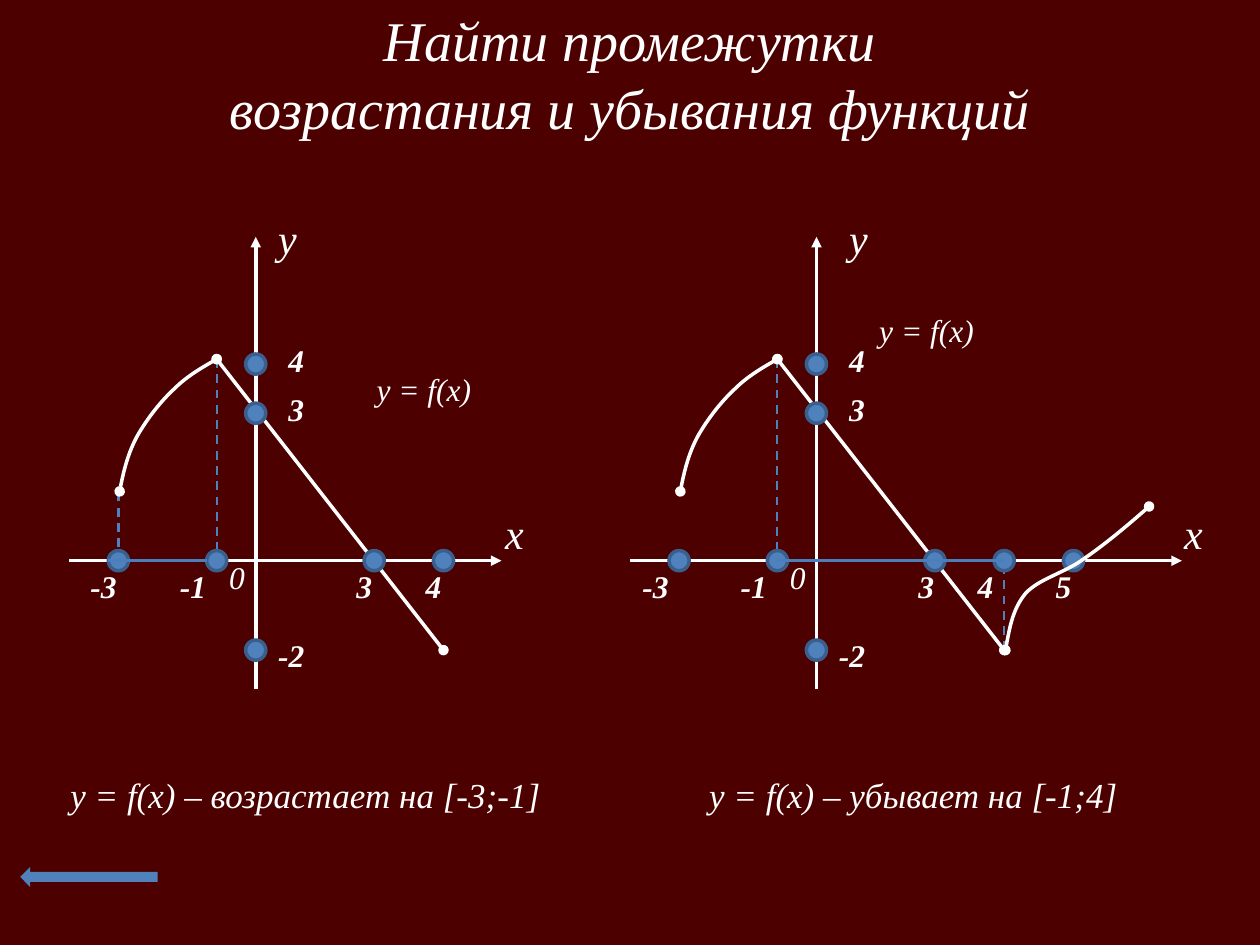
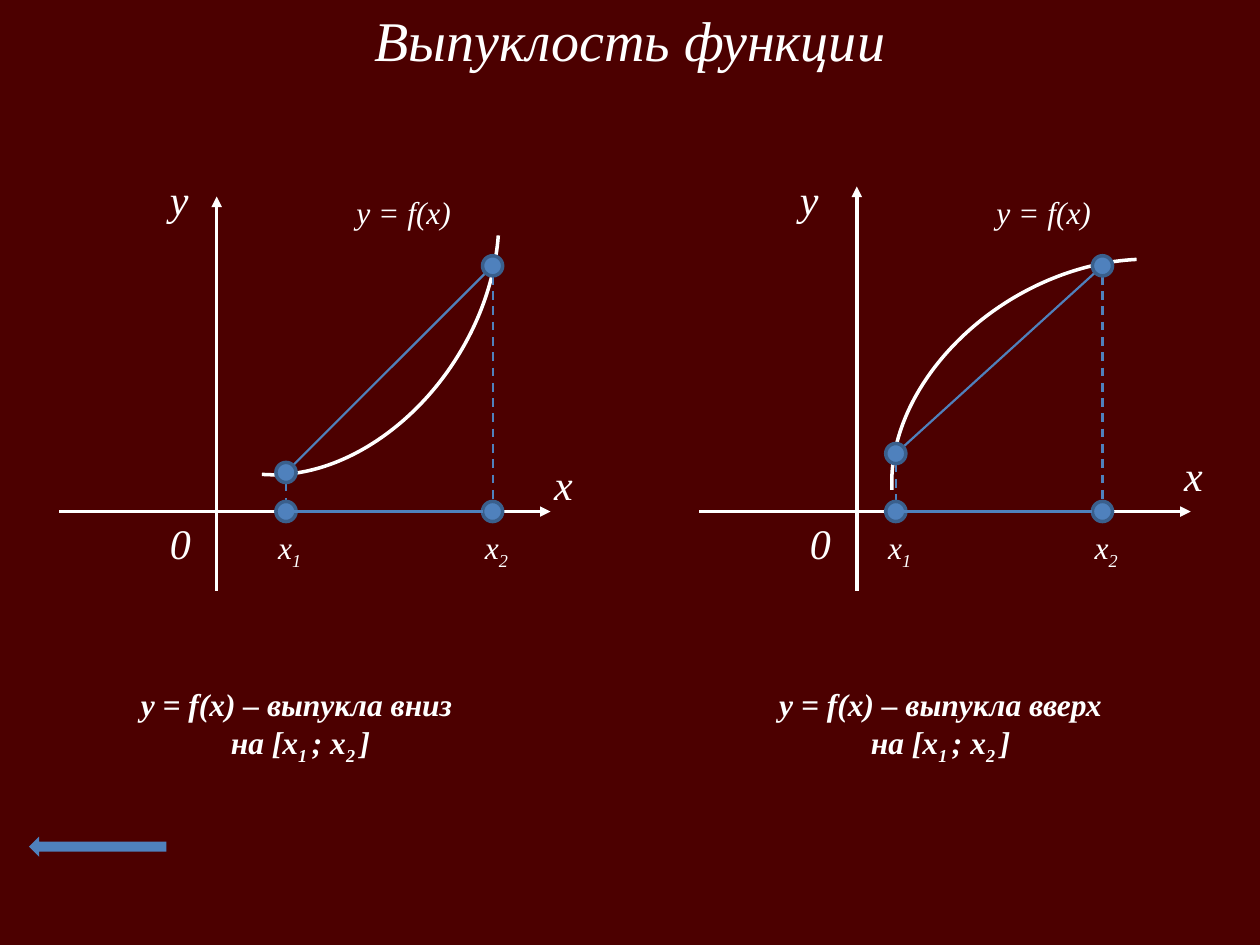
from lxml.etree import SubElement
from pptx import Presentation
from pptx.dml.color import RGBColor
from pptx.enum.dml import MSO_LINE_DASH_STYLE as Dash
from pptx.enum.shapes import MSO_CONNECTOR as Connector, MSO_SHAPE as Shape
from pptx.enum.text import MSO_ANCHOR as Anchor, MSO_AUTO_SIZE as AutoSize, PP_ALIGN as Align
from pptx.oxml.ns import qn
from pptx.util import Inches, Pt

MAROON = RGBColor(0x4C, 0x00, 0x00)
WHITE = RGBColor(0xFF, 0xFF, 0xFF)
BLUE = RGBColor(0x4F, 0x81, 0xBD)
SEGMENT_BLUE = RGBColor(0x4B, 0x7E, 0xBC)
DOT_EDGE = RGBColor(0x3A, 0x5F, 0x8C)
FONT = "Times New Roman"
DOT = 0.16
FORMULA = "y = f(x)"

RISING_ARC = [(-1.08, -0.55), (-1.05, -0.71), (-1.01, -0.86), (-0.94, -0.99),
              (-0.86, -1.13), (-0.75, -1.27), (-0.64, -1.37),
              (-0.54, -1.47), (-0.31, -1.6), (-0.31, -1.6)]
RISING_TAIL = [(1.5, 0.71), (1.53, 0.55), (1.56, 0.38), (1.66, 0.26),
               (1.77, 0.14), (1.97, 0.1), (2.13, -0.02),
               (2.29, -0.13), (2.47, -0.28), (2.64, -0.43)]


def add_text(slide, box, paragraphs, size=18, bold=False, align=Align.LEFT,
             wrap=True, anchor=Anchor.TOP):
    """Add italic text; each paragraph is a string or a list of (text, is_subscript)."""
    frame = slide.shapes.add_textbox(*map(Inches, box)).text_frame
    frame.word_wrap = wrap
    frame.auto_size = AutoSize.SHAPE_TO_FIT_TEXT
    frame.vertical_anchor = anchor
    for index, spans in enumerate(paragraphs):
        para = frame.paragraphs[0] if index == 0 else frame.add_paragraph()
        para.alignment = align
        for text, is_subscript in [(spans, False)] if isinstance(spans, str) else spans:
            span = para.add_run()
            span.text = text
            font = span.font
            font.name, font.size, font.bold, font.italic = FONT, Pt(size), bold, True
            font.color.rgb = WHITE
            if is_subscript:
                span._r.get_or_add_rPr().set("baseline", "-25000")


def add_ends(shape, head, tail):
    """Put the given arrowheads on the ends of an outline."""
    outline = shape.element.spPr.find(qn("a:ln"))
    for tag, kind in (("a:headEnd", head), ("a:tailEnd", tail)):
        if kind:
            SubElement(outline, qn(tag), type=kind)


def add_line(slide, start, end, color=WHITE, width=2, dashed=False, head=None, tail=None):
    """Add a straight line between two points."""
    line = slide.shapes.add_connector(Connector.STRAIGHT, *map(Inches, (*start, *end)))
    line.line.color.rgb = color
    line.line.width = Pt(width)
    if dashed:
        line.line.dash_style = Dash.DASH
    add_ends(line, head, tail)
    SubElement(line.element.spPr, qn("a:effectLst"))


def add_dot(slide, center):
    """Add a blue marker centred on a point."""
    x, y = center
    dot = slide.shapes.add_shape(Shape.OVAL, Inches(x - DOT / 2), Inches(y - DOT / 2),
                                 Inches(DOT), Inches(DOT))
    dot.shadow.inherit = False
    dot.fill.solid()
    dot.fill.fore_color.rgb = BLUE
    dot.line.color.rgb = DOT_EDGE
    dot.line.width = Pt(2)


def add_curve(slide, nodes):
    """Add a white chain of cubic curves with round ends; segments share end nodes."""
    points = [(Inches(x), Inches(y)) for x, y in nodes]
    builder = slide.shapes.build_freeform(*points[0])
    builder.add_line_segments(points[1:], close=False)
    curve = builder.convert_to_shape()
    outline = next(curve.element.iter(qn("a:path")))
    steps = outline.findall(qn("a:lnTo"))
    for first in range(0, len(steps), 3):
        cubic = SubElement(outline, qn("a:cubicBezTo"))
        for step in steps[first:first + 3]:
            cubic.append(step[0])
            outline.remove(step)
    curve.shadow.inherit = False
    curve.fill.background()
    curve.line.color.rgb = WHITE
    curve.line.width = Pt(2)
    add_ends(curve, "oval", "oval")


def add_axes(slide, origin, left, right, top, bottom):
    """Add the two coordinate axes, given their reach from the origin."""
    x, y = origin
    add_line(slide, (x, y + top), (x, y + bottom), head="triangle")
    add_line(slide, (x + right, y), (x + left, y), head="triangle")


def start_slide(deck, title_lines, title_height, arrow_at):
    """Add a slide with its background, title and back arrow."""
    slide = deck.slides.add_slide(deck.slide_layouts[6])
    slide.background.fill.solid()
    slide.background.fill.fore_color.rgb = MAROON
    add_text(slide, (0, -0.01, 10, title_height), title_lines, 32,
             align=Align.CENTER, anchor=Anchor.MIDDLE)
    arrow = slide.shapes.add_shape(Shape.LEFT_ARROW, *map(Inches, (*arrow_at, 1.09, 0.16)))
    arrow.shadow.inherit = False
    arrow.fill.solid()
    arrow.fill.fore_color.rgb = BLUE
    arrow.line.fill.background()
    return slide


def add_monotonic_graph(slide, origin, x_reach, x_labels, names, drops, interval, curves):
    """Add a broken-line graph whose parts are placed from its origin."""
    ox, oy = origin

    def at(x, y):
        return ox + x, oy + y

    for x, top, bottom in drops:
        add_line(slide, at(x, top), at(x, bottom), BLUE, 1.25, dashed=True)
    add_axes(slide, origin, -1.48, x_reach, -2.57, 1.02)
    add_line(slide, at(-0.31, -1.6), at(1.49, 0.71), head="oval", tail="oval")
    for text, (x, y), size in names:
        width = 0.96 if text == FORMULA else 0.55
        height = 0.5 if size == 24 else 0.4
        add_text(slide, (*at(x, y), width, height), [text], size, wrap=text != FORMULA)
    marks = [(text, (tick, 0), (left, 0)) for text, tick, left in x_labels]
    marks += [("4", (0, -1.56), (0.16, -1.79)), ("3", (0, -1.17), (0.16, -1.4)),
              ("-2", (0, 0.71), (0.08, 0.55))]
    for text, tick, place in marks:
        add_dot(slide, at(*tick))
        width = 0.31 if len(text) == 1 else 0.54
        add_text(slide, (*at(*place), width, 0.4), [text], bold=True)
    add_line(slide, at(interval[0], 0), at(interval[1], 0), SEGMENT_BLUE)
    for nodes in curves:
        add_curve(slide, [at(*node) for node in nodes])


def add_convex_graph(slide, origin, top, x_name, y_name, x1, x2, y1, arc, direction, height):
    """Add a convex graph with its chord and caption, placed from its origin."""
    ox, oy = origin
    y2 = -1.95

    def at(x, y):
        return ox + x, oy + y

    add_line(slide, at(x1, y1), at(x2, y2), BLUE, 1.25)
    add_axes(slide, origin, -1.25, 2.65, top, 0.63)
    for text, place in (("x", x_name), ("0", (-0.47, 0)), ("y", y_name)):
        add_text(slide, (*at(*place), 0.55, 0.5), [text], 24)
    add_text(slide, (*at(1.01, -2.58), 0.96, 0.4), [FORMULA], wrap=False)

    arc_at, rotation, angles = arc
    curve = slide.shapes.add_shape(Shape.ARC, *map(Inches, (*at(*arc_at), 3.43, 2.54)))
    curve.shadow.inherit = False
    curve.rotation = rotation
    curve.adjustments[0], curve.adjustments[1] = angles
    curve.fill.background()
    curve.line.color.rgb = WHITE
    curve.line.width = Pt(2)

    for x, y, digit in ((x1, y1, "1"), (x2, y2, "2")):
        add_line(slide, at(x, y + DOT / 2), at(x, 0), BLUE, 1.25, dashed=True)
        add_dot(slide, at(x, y))
        add_dot(slide, at(x, 0))
        add_text(slide, (*at(x - 0.16, 0.08), 0.4, 0.4),
                 [[("x", False), (digit, True)]], wrap=False)
    add_line(slide, at(x1, 0), at(x2 - DOT / 2, 0), BLUE)
    interval = [("на [x", False), ("1 ", True), ("; х", False), ("2 ", True), ("]", False)]
    add_text(slide, (*at(-0.86, 1.33), 3.05, height),
             [f"{FORMULA} – выпукла {direction}", interval], bold=True, align=Align.CENTER)


def build_monotonic_slide(deck):
    """Build the slide on increasing and decreasing intervals."""
    slide = start_slide(deck, ["Найти промежутки", "возрастания и убывания функций"],
                        1.18, (0.16, 6.88))
    add_monotonic_graph(
        slide, (2.03, 4.45), 1.95,
        [("-3", -1.09, -1.41), ("-1", -0.31, -0.7), ("3", 0.94, 0.7), ("4", 1.49, 1.25)],
        [("x", (1.88, -0.47), 24), ("0", (-0.31, -0.07), 18), ("y", (0.08, -2.81), 24),
         (FORMULA, (0.86, -1.56), 18)],
        [(-1.09, -0.54, -0.07), (-0.31, -1.6, -0.07)], (-1.17, -0.39), [RISING_ARC])
    add_monotonic_graph(
        slide, (6.48, 4.45), 2.9,
        [("-3", -1.09, -1.48), ("-1", -0.31, -0.7), ("3", 0.94, 0.71),
         ("4", 1.49, 1.18), ("5", 2.04, 1.8)],
        [("x", (2.82, -0.47), 24), ("0", (-0.31, -0.07), 18), ("y", (0.16, -2.81), 24),
         (FORMULA, (0.4, -2.03), 18)],
        [(-0.31, -1.6, -0.07), (1.49, 0.71, 0.08)], (-0.31, 1.49), [RISING_ARC, RISING_TAIL])
    for left, width, text in ((0.46, 4.62, "возрастает на [-3;-1]"),
                              (5.53, 4.08, "убывает на [-1;4]")):
        add_text(slide, (left, 6.09, width, 0.44), [f"{FORMULA} – {text}"], 20)


def build_convex_slide(deck):
    """Build the slide on convex functions."""
    slide = start_slide(deck, ["Выпуклость функции"], 0.64, (0.23, 6.64))
    add_convex_graph(slide, (1.72, 4.06), -2.5, (2.58, -0.47), (-0.47, -2.73), 0.55, 2.19,
                     -0.31, ((-0.89, -3.16), 122.6, (135.21, 206.23)), "вниз ", 0.71)
    add_convex_graph(slide, (6.8, 4.06), -2.58, (2.5, -0.54), (-0.55, -2.73), 0.31, 1.95,
                     -0.46, ((0.17, -1.87), 148.8, (9.77, 80.79)), "вверх", 1.01)


def main():
    """Build and save the deck."""
    deck = Presentation()
    deck.slide_width, deck.slide_height = Inches(10), Inches(7.5)
    build_monotonic_slide(deck)
    build_convex_slide(deck)
    deck.save("out.pptx")


if __name__ == "__main__":
    main()
